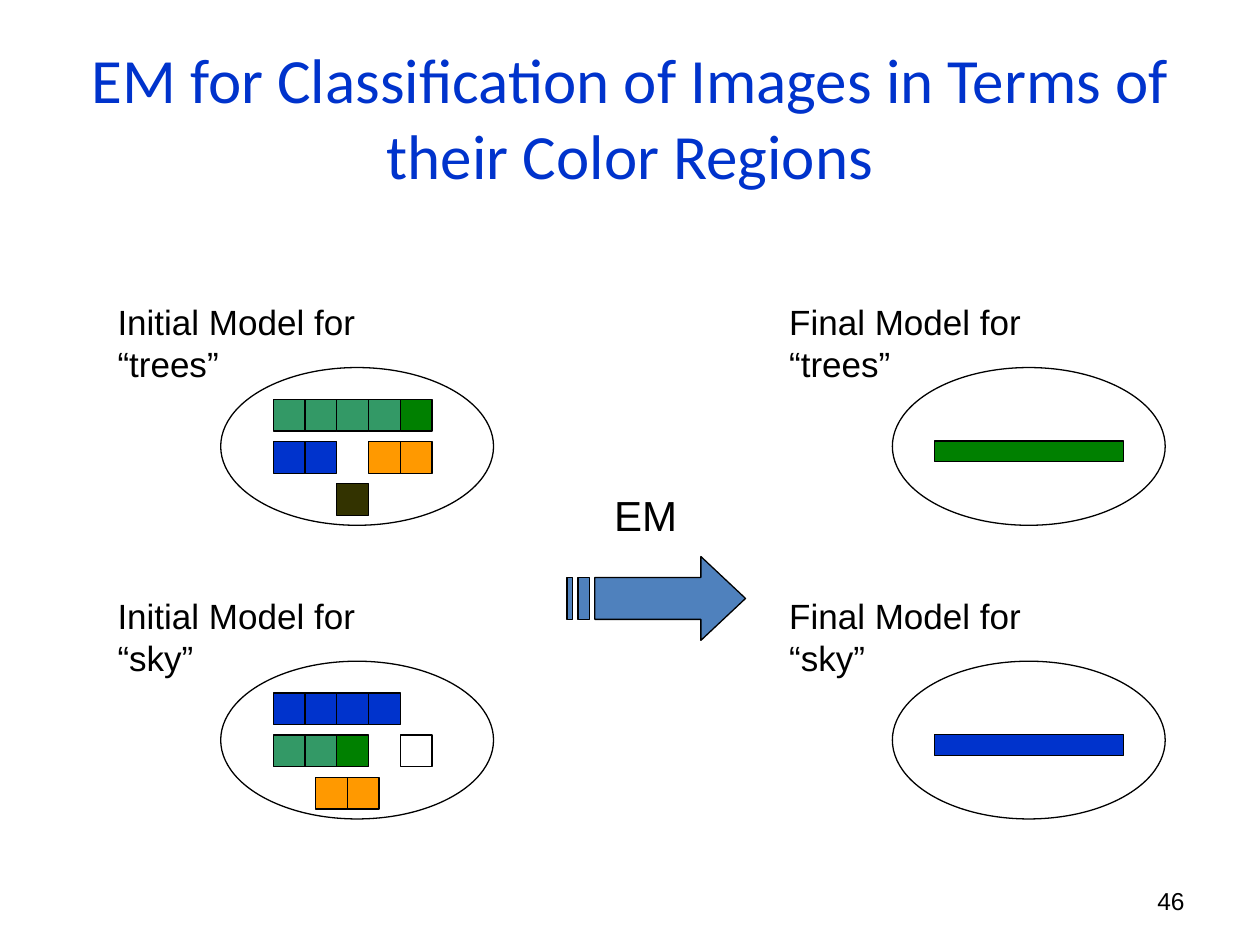
from pptx import Presentation
from pptx.dml.color import RGBColor
from pptx.enum.shapes import MSO_SHAPE
from pptx.enum.text import MSO_ANCHOR, PP_ALIGN
from pptx.util import Cm, Pt

RECT, OVAL = MSO_SHAPE.RECTANGLE, MSO_SHAPE.OVAL
LEFT, CENTER, RIGHT = PP_ALIGN.LEFT, PP_ALIGN.CENTER, PP_ALIGN.RIGHT
TOP, MIDDLE = MSO_ANCHOR.TOP, MSO_ANCHOR.MIDDLE

BLACK, WHITE, BLUE, STEEL = "000000", "FFFFFF", "0033CC", "4F81BD"
GREEN, SEA, ORANGE, OLIVE = "008000", "339966", "FF9900", "333300"

CELL, ROW_PITCH = 0.64, 0.85
OVAL_W, OVAL_H = 5.5, 3.18
LEFT_X, RIGHT_X = 2.12, 15.66

# Each row of cells: (first column, colours from left to right; None is a gap)
TREE_ROWS = [
    (0, [SEA] * 4 + [GREEN]),
    (0, [BLUE, BLUE, None, ORANGE, ORANGE]),
    (2, [OLIVE]),
]
SKY_ROWS = [
    (0, [BLUE] * 4),
    (0, [SEA, SEA, GREEN, None, WHITE]),
    (1.33, [ORANGE] * 2),
]


def color(value):
    return RGBColor.from_string(value)


def write(tf, text, size=20, font="Arial", fill=BLACK, align=LEFT, anchor=TOP):
    tf.word_wrap = True
    tf.vertical_anchor = anchor
    p = tf.paragraphs[0]
    p.alignment = align
    r = p.add_run()
    r.text = text
    r.font.size = Pt(size)
    r.font.name = font
    r.font.color.rgb = color(fill)


def add_text(shapes, text, x, y, w, h, **fmt):
    tb = shapes.add_textbox(Cm(x), Cm(y), Cm(w), Cm(h))
    write(tb.text_frame, text, **fmt)


def paint(sp, fill=None):
    """Apply a flat fill (or none) and a thin black outline."""
    sp.shadow.inherit = False
    if fill:
        sp.fill.solid()
        sp.fill.fore_color.rgb = color(fill)
    else:
        sp.fill.background()
    sp.line.color.rgb = color(BLACK)
    sp.line.width = Pt(0.75)


def add_box(shapes, kind, x, y, w, h, fill=None):
    paint(shapes.add_shape(kind, Cm(x), Cm(y), Cm(w), Cm(h)), fill)


def add_title(slide, text, x, y, w, h):
    sp = slide.shapes.title
    sp.left, sp.top, sp.width, sp.height = Cm(x), Cm(y), Cm(w), Cm(h)
    write(sp.text_frame, text, size=36, font="Calibri", fill=BLUE,
          align=CENTER, anchor=MIDDLE)


def add_model(slide, label, x, y):
    """Add a labelled ellipse; return its group's shapes and its corner."""
    shapes = slide.shapes.add_group_shape().shapes
    oval_x, oval_y = x + 2.33, y + 1.48
    add_box(shapes, OVAL, oval_x, oval_y, OVAL_W, OVAL_H)
    add_text(shapes, label, x, y, 6.6, 1.1)
    return shapes, oval_x, oval_y


def add_initial_model(slide, label, rows, x, y):
    shapes, oval_x, oval_y = add_model(slide, label, x, y)
    for i, (start, fills) in enumerate(rows):
        for col, fill in enumerate(fills, 0):
            if fill:
                add_box(shapes, RECT, oval_x + 1.06 + (start + col) * CELL,
                        oval_y + 0.64 + i * ROW_PITCH, CELL, CELL, fill)


def add_final_model(slide, label, fill, x, y):
    shapes, oval_x, oval_y = add_model(slide, label, x, y)
    add_box(shapes, RECT, oval_x + 0.85, oval_y + 1.48, 3.81, 0.42, fill)


def add_em_step(slide, x, y, w, h):
    """Add the striped arrow, drawn on a 32 by 4 grid, with its caption above."""
    shapes = slide.shapes.add_group_shape().shapes
    fb = shapes.build_freeform(24, 0, scale=(Cm(w) / 32, Cm(h) / 4))
    fb.add_line_segments([(24, 1), (5, 1), (5, 3), (24, 3), (24, 4), (32, 2)])
    for x1, x2 in [(2, 4), (0, 1)]:
        fb.move_to(x1, 1)
        fb.add_line_segments([(x1, 3), (x2, 3), (x2, 1)])
    paint(fb.convert_to_shape(Cm(x), Cm(y)), STEEL)
    add_text(shapes, "EM", x + 0.42, y - 1.48, 2.33, 1.27, size=24, align=CENTER)


def main():
    prs = Presentation()
    prs.slide_width, prs.slide_height = Cm(25.4), Cm(19.05)
    slide = prs.slides.add_slide(prs.slide_layouts[5])
    add_title(slide, "EM for Classification of Images in Terms of their Color Regions",
              1.27, 0.76, 22.86, 3.18)
    models = [("trees", TREE_ROWS, GREEN, 5.93), ("sky", SKY_ROWS, BLUE, 11.85)]
    for name, rows, fill, y in models:
        add_initial_model(slide, f"Initial Model for “{name}”", rows, LEFT_X, y)
        add_final_model(slide, f"Final Model for “{name}”", fill, RIGHT_X, y)
    add_em_step(slide, 11.43, 11.22, 3.6, 1.69)
    add_text(slide.shapes, "46", 18.21, 17.65, 5.92, 1.02,
             size=14, align=RIGHT, anchor=MIDDLE)
    prs.save("out.pptx")


if __name__ == "__main__":
    main()
